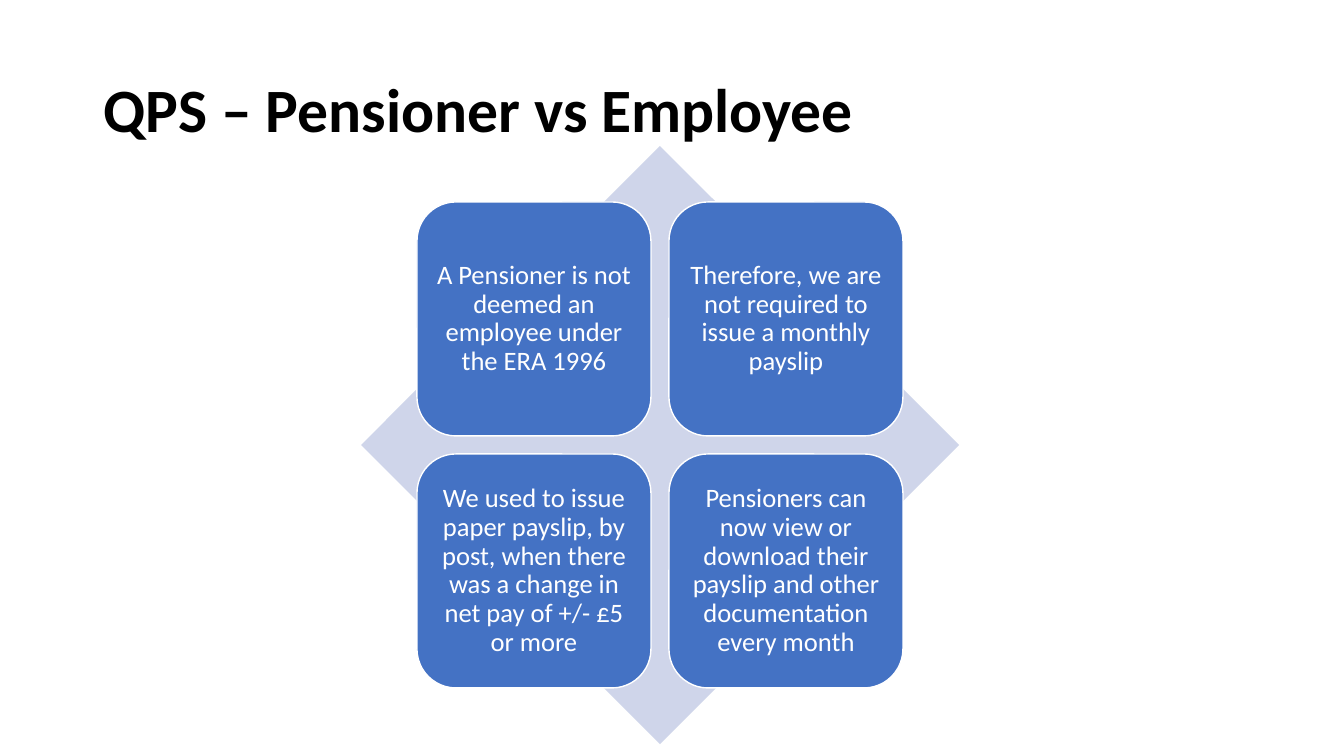
from pptx import Presentation
from pptx.dml.color import RGBColor
from pptx.enum.shapes import MSO_SHAPE as Shape
from pptx.enum.text import MSO_ANCHOR as Anchor, MSO_AUTO_SIZE as AutoSize, PP_ALIGN as Align
from pptx.util import Pt

EMU_PER_PX = 914400 / 100.8
FONT = "Calibri"
COLORS = {"title": "000000", "diamond": "CFD5EA", "tile": "4472C4", "white": "FFFFFF"}

TITLE = "QPS – Pensioner vs Employee"
POINTS = [
    "A Pensioner is not deemed an employee under the ERA 1996",
    "Therefore, we are not required to issue a monthly payslip",
    "We used to issue paper payslip, by post, when there was a change in "
    "net pay of +/- £5 or more",
    "Pensioners can now view or download their payslip and other "
    "documentation every month",
]


def px(length):
    return round(length * EMU_PER_PX)


def color(name):
    return RGBColor.from_string(COLORS[name])


def write(shape, text, size, color_name, align, bold=False):
    frame = shape.text_frame
    frame.word_wrap = True
    frame.auto_size = AutoSize.NONE
    frame.vertical_anchor = Anchor.MIDDLE
    para = frame.paragraphs[0]
    para.alignment = align
    para.line_spacing = 0.9
    span = para.add_run()
    span.text = text
    span.font.name = FONT
    span.font.size = Pt(size)
    span.font.bold = bold
    span.font.color.rgb = color(color_name)


def add_filled(page, kind, box, fill):
    shape = page.shapes.add_shape(kind, *map(px, box))
    shape.shadow.inherit = False
    shape.fill.solid()
    shape.fill.fore_color.rgb = color(fill)
    shape.line.fill.background()
    return shape


def place_title(page, box):
    title = page.shapes.title
    title.left, title.top, title.width, title.height = map(px, box)
    write(title, TITLE, 44, "title", Align.LEFT, bold=True)


def add_tile(page, box, text):
    tile = add_filled(page, Shape.ROUNDED_RECTANGLE, box, "tile")
    tile.line.color.rgb = color("white")
    tile.line.width = Pt(1)
    frame = tile.text_frame
    frame.margin_left = frame.margin_right = px(8)
    frame.margin_top = frame.margin_bottom = px(8)
    write(tile, text, 19, "white", Align.CENTER)


def add_matrix(page, box):
    # Diamond behind a centred two-by-two grid of tiles
    left, top, width, height = box
    add_filled(page, Shape.DIAMOND, box, "diamond")
    side, gap = 234, 18
    grid = 2 * side + gap
    grid_left = left + (width - grid) // 2
    grid_top = top + (height - grid) // 2
    for index, text in enumerate(POINTS):
        row, column = divmod(index, 2)
        add_tile(page, (grid_left + column * (side + gap),
                        grid_top + row * (side + gap), side, side), text)


def main():
    deck = Presentation()
    deck.slide_width, deck.slide_height = px(1344), px(756)
    title_only = deck.slide_layouts[5]
    page = deck.slides.add_slide(title_only)
    place_title(page, (93, 40, 1159, 146))
    add_matrix(page, (361, 146, 598, 598))
    deck.save("out.pptx")


if __name__ == "__main__":
    main()
